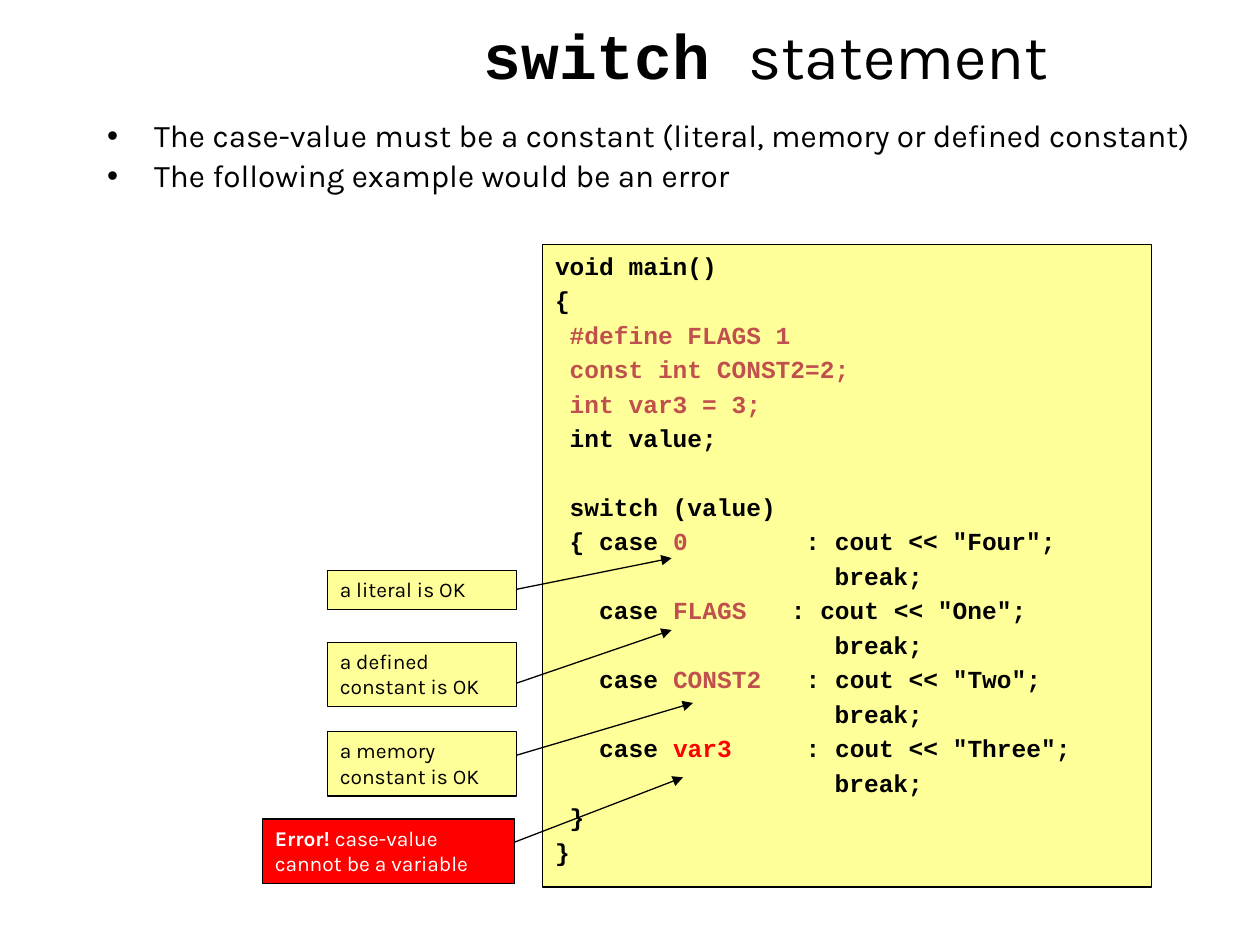
from dataclasses import dataclass
from typing import NamedTuple

from lxml import etree
from pptx import Presentation
from pptx import util as u
from pptx.dml.color import RGBColor
from pptx.enum import shapes, text
from pptx.oxml.ns import qn


@dataclass(frozen=True)
class Theme:
    black: str = "000000"
    white: str = "FFFFFF"
    panel: str = "FFFF99"
    accent: str = "C0504D"
    error: str = "FF0000"
    body_font: str = "Karla"
    code_font: str = "Courier New"
    title_size: int = 36
    bullet_size: int = 18
    code_size: int = 14
    note_size: int = 12
    line_width: float = 0.75
    bullet_gap: float = 3.5
    code_gap: float = 2.9
    code_pitch: float = 19.6


THEME = Theme()


class Span(NamedTuple):
    words: str
    color: str = THEME.black
    bold: bool = False
    font: str = THEME.body_font


class Box(NamedTuple):
    """Position and size in centimetres."""
    left: float
    top: float
    width: float
    height: float


class Note(NamedTuple):
    box: Box
    fill: str
    spans: list[Span]
    arrow_start: tuple[float, float]
    arrow_end: tuple[float, float]


def code(words: str, color: str = THEME.black) -> Span:
    return Span(words, color, True, THEME.code_font)


def case_lines(opening: str, value: str, color: str, action: str) -> list[list[Span]]:
    """A case label with its output statement, then its break."""
    return [[code(opening), code(value, color), code(action)],
            [code(" " * 19 + "break;")]]


TITLE = [Span("switch ", bold=True, font=THEME.code_font), Span("statement")]

BULLETS = [
    [Span("The case-value must be a constant (literal, memory or defined constant)")],
    [Span("The following example would be an error")],
]

DECLARATIONS = [
    [code("void main()")],
    [code("{")],
    [code(" #define FLAGS 1", THEME.accent)],
    [code(" const int CONST2=2;", THEME.accent)],
    [code(" int var3 = 3;", THEME.accent)],
    [code(" int value;")],
]

SWITCH_BLOCK = [
    [code(" switch (value)")],
    *case_lines(" { case ", "0 ", THEME.accent, '       : cout << "Four";'),
    *case_lines("   case ", "FLAGS", THEME.accent, '   : cout << "One";'),
    *case_lines("   case ", "CONST2  ", THEME.accent, ' : cout << "Two";'),
    *case_lines("   case ", "var3    ", THEME.error, ' : cout << "Three";'),
    [code(" }")],
    [code("}")],
]

NOTES = [
    Note(Box(6.6, 11.5, 3.81, 0.79), THEME.panel, [Span("a literal is OK")],
         (10.36, 11.89), (13.54, 11.25)),
    Note(Box(6.6, 12.95, 3.81, 1.3), THEME.panel, [Span("a defined constant is OK")],
         (10.36, 13.79), (13.54, 12.7)),
    Note(Box(6.6, 14.75, 3.81, 1.3), THEME.panel, [Span("a memory constant is OK")],
         (10.36, 15.24), (13.97, 14.17)),
    Note(Box(5.29, 16.51, 5.08, 1.3), THEME.error,
         [Span("Error!", THEME.white, True),
          Span(" case-value cannot be a variable", THEME.white)],
         (10.34, 16.99), (13.77, 15.67)),
]


def rgb(color: str) -> RGBColor:
    return RGBColor.from_string(color)


def add_panel(slide, box: Box, fill: str, lines: list[list[Span]], size: int,
              gap: float = 0, outlined: bool = True):
    """Draw a filled rectangle with one paragraph per line and return its paragraphs."""
    panel = slide.shapes.add_shape(shapes.MSO_SHAPE.RECTANGLE,
                                   *(u.Cm(length) for length in box))
    panel.shadow.inherit = False
    panel.fill.solid()
    panel.fill.fore_color.rgb = rgb(fill)
    if outlined:
        panel.line.color.rgb = rgb(THEME.black)
        panel.line.width = u.Pt(THEME.line_width)
    else:
        panel.line.fill.background()

    frame = panel.text_frame
    frame.word_wrap = True
    frame.vertical_anchor = text.MSO_ANCHOR.TOP
    for index, spans in enumerate(lines):
        paragraph = frame.add_paragraph() if index else frame.paragraphs[0]
        paragraph.alignment = text.PP_ALIGN.LEFT
        if index:
            paragraph.space_before = u.Pt(gap)
        for span in spans:
            run = paragraph.add_run()
            run.text = span.words
            run.font.name = span.font
            run.font.size = u.Pt(size)
            run.font.bold = span.bold
            run.font.color.rgb = rgb(span.color)
    return frame.paragraphs


def add_bullet(paragraph) -> None:
    paragraph.line_spacing = 0.9
    properties = paragraph._p.get_or_add_pPr()
    indent = u.Cm(0.95)
    properties.set("marL", str(indent))
    properties.set("indent", str(-indent))
    etree.SubElement(properties, qn("a:buFont"), typeface="Arial")
    etree.SubElement(properties, qn("a:buChar"), char="•")


def add_arrow(slide, start: tuple[float, float], end: tuple[float, float]) -> None:
    arrow = slide.shapes.add_connector(shapes.MSO_CONNECTOR.STRAIGHT,
                                       *(u.Cm(length) for length in start + end))
    arrow.line.color.rgb = rgb(THEME.black)
    arrow.line.width = u.Pt(THEME.line_width)
    etree.SubElement(arrow.line._get_or_add_ln(), qn("a:tailEnd"), type="triangle")
    etree.SubElement(arrow._element.spPr, qn("a:effectLst"))


def main() -> None:
    deck = Presentation()
    deck.slide_width, deck.slide_height = u.Cm(25.4), u.Cm(19.05)
    slide = deck.slides.add_slide(deck.slide_layouts[6])

    title = add_panel(slide, Box(7.19, 0.2, 16.51, 2.11), THEME.white, [TITLE],
                      THEME.title_size, outlined=False)
    title[0].alignment = text.PP_ALIGN.CENTER

    for bullet in add_panel(slide, Box(1.91, 2.3, 22.66, 2.11), THEME.white, BULLETS,
                            THEME.bullet_size, THEME.bullet_gap, outlined=False):
        add_bullet(bullet)

    listing = add_panel(slide, Box(10.94, 4.93, 12.27, 12.95), THEME.panel,
                        DECLARATIONS + SWITCH_BLOCK, THEME.code_size, THEME.code_gap)
    listing[len(DECLARATIONS)].space_before = u.Pt(THEME.code_gap + THEME.code_pitch)

    for note in NOTES:
        add_arrow(slide, note.arrow_start, note.arrow_end)
    for note in NOTES:
        add_panel(slide, note.box, note.fill, [note.spans], THEME.note_size)

    deck.save("out.pptx")


if __name__ == "__main__":
    main()
